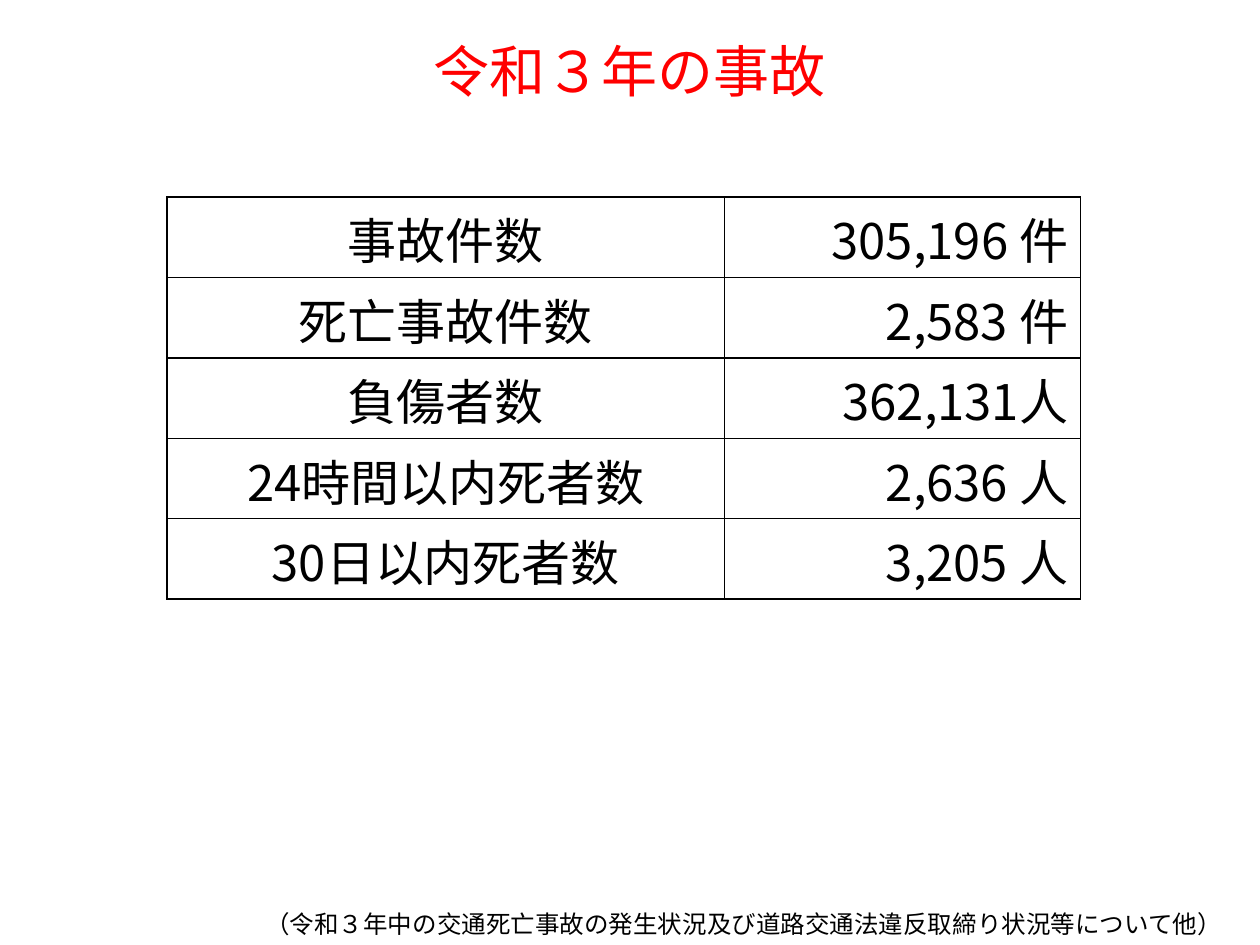
from dataclasses import dataclass

from lxml.etree import SubElement
from pptx import Presentation
from pptx.dml.color import RGBColor
from pptx.enum.text import MSO_ANCHOR as Anchor, PP_ALIGN as Align
from pptx.oxml.ns import qn
from pptx.util import Pt


@dataclass(frozen=True)
class Theme:
    font: str = "Noto Sans CJK JP"
    accent: str = "FF0000"
    ink: str = "000000"
    title_size: int = 32
    table_size: int = 28
    source_size: int = 14
    rule_width: int = 1


THEME = Theme()
STATISTICS = [
    ("事故件数", "305,196 件"),
    ("死亡事故件数", "2,583 件"),
    ("負傷者数", "362,131人"),
    ("24時間以内死者数", "2,636 人"),
    ("30日以内死者数", "3,205 人"),
]


def write(frame, text, size, color, align):
    """Put one styled paragraph in a text frame, for Latin and Japanese text."""
    paragraph = frame.paragraphs[0]
    paragraph.text = text
    paragraph.alignment = align
    font = paragraph.font
    font.name = THEME.font
    font.size = Pt(size)
    font.color.rgb = RGBColor.from_string(color)
    defaults = paragraph._p.pPr.find(qn("a:defRPr"))
    SubElement(defaults, qn("a:ea"), typeface=THEME.font)


def add_text(slide, box, text, size, color, align):
    frame = slide.shapes.add_textbox(*map(Pt, box)).text_frame
    frame.word_wrap = True
    frame.vertical_anchor = Anchor.MIDDLE
    write(frame, text, size, color, align)


def rule_cell(cell):
    """Draw a solid rule on all four sides of a cell without fill."""
    properties = cell._tc.get_or_add_tcPr()
    for side in ("a:lnL", "a:lnR", "a:lnT", "a:lnB"):
        line = SubElement(properties, qn(side), w=str(Pt(THEME.rule_width)))
        paint = SubElement(line, qn("a:solidFill"))
        SubElement(paint, qn("a:srgbClr"), val=THEME.ink)
    cell.fill.background()


def add_statistics(slide, box, label_share=0.61):
    left, top, width, height = box
    table = slide.shapes.add_table(len(STATISTICS), 2, *map(Pt, box)).table
    table.first_row = table.horz_banding = False
    label_width = width * label_share
    table.columns[0].width = Pt(label_width)
    table.columns[1].width = Pt(width - label_width)
    for row, record in enumerate(STATISTICS):
        table.rows[row].height = Pt(height / len(STATISTICS))
        for column, (text, align) in enumerate(zip(record, (Align.CENTER, Align.RIGHT))):
            cell = table.cell(row, column)
            write(cell.text_frame, text, THEME.table_size, THEME.ink, align)
            rule_cell(cell)


def main():
    presentation = Presentation()
    presentation.slide_width, presentation.slide_height = Pt(720), Pt(540)
    slide = presentation.slides.add_slide(presentation.slide_layouts[6])
    add_text(slide, (54, 15, 612, 50), "令和３年の事故",
             THEME.title_size, THEME.accent, Align.CENTER)
    add_statistics(slide, (95.5, 112.5, 522, 230))
    add_text(slide, (144.5, 515.5, 575.5, 24.5),
             "（令和３年中の交通死亡事故の発生状況及び道路交通法違反取締り状況等について他）",
             THEME.source_size, THEME.ink, Align.LEFT)
    presentation.save("out.pptx")


if __name__ == "__main__":
    main()
